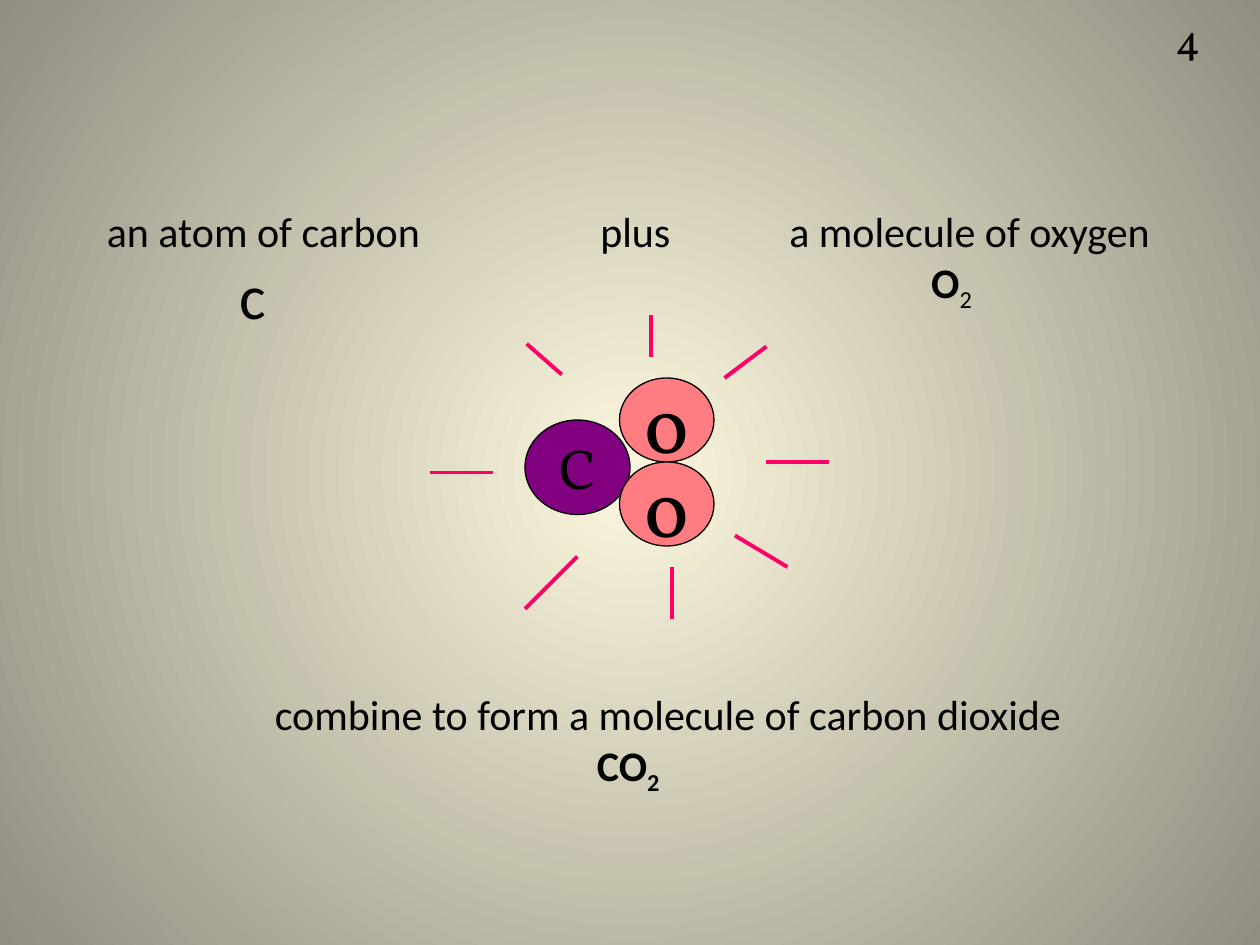
from lxml.etree import SubElement
from pptx import Presentation
from pptx.dml.color import RGBColor
from pptx.enum.shapes import MSO_CONNECTOR, MSO_SHAPE
from pptx.enum.text import MSO_ANCHOR, MSO_AUTO_SIZE, PP_ALIGN
from pptx.oxml.ns import qn
from pptx.util import Pt

BLACK = RGBColor(0x00, 0x00, 0x00)
CARBON_PURPLE = RGBColor(0x80, 0x00, 0x80)
OXYGEN_PINK = RGBColor(0xFF, 0x7C, 0x80)
RAY_PINK = RGBColor(0xFF, 0x00, 0x66)
GLOW_CREAM = RGBColor(0xFC, 0xF7, 0xDD)
EDGE_GREY = RGBColor(0x91, 0x8E, 0x81)

RAYS = [
    (372, 204, 372, 180),
    (414, 216, 438, 198),
    (438, 264, 474, 264),
    (321, 214, 301, 196.5),
    (282, 270, 246, 270),
    (384, 324, 384, 354),
    (330, 318, 300, 348),
    (420, 306, 450, 324),
]


def paint_background(slide):
    fill = slide.background.fill
    fill.gradient()
    for stop, colour, position in zip(
        fill.gradient_stops, (GLOW_CREAM, EDGE_GREY), (0, 1)
    ):
        stop.color.rgb = colour
        stop.position = position
    gradient = slide.element.find(".//" + qn("a:gradFill"))
    gradient.remove(gradient.find(qn("a:lin")))
    glow = SubElement(gradient, qn("a:path"))
    glow.set("path", "circle")
    centre = SubElement(glow, qn("a:fillToRect"))
    for side in "ltrb":
        centre.set(side, "50000")


def write(paragraph, text, size=24, font="Calibri", bold=False, baseline=0):
    run = paragraph.add_run()
    run.text = text
    run.font.size = Pt(size)
    run.font.name = font
    run.font.bold = bold
    run.font.color.rgb = BLACK
    if baseline:
        run.font._element.set("baseline", str(baseline * 1000))


def add_label(slide, left, top, width, height, text, **text_format):
    label = slide.shapes.add_textbox(Pt(left), Pt(top), Pt(width), Pt(height))
    frame = label.text_frame
    frame.word_wrap = True
    frame.auto_size = MSO_AUTO_SIZE.SHAPE_TO_FIT_TEXT
    write(frame.paragraphs[0], text, **text_format)
    return frame


def add_formula_line(frame, indent):
    formula = frame.add_paragraph()
    properties = formula._p.get_or_add_pPr()
    properties.set("marL", str(Pt(indent)))
    properties.set("indent", "0")
    return formula


def add_atom(shapes, left, top, width, height, symbol, colour, size):
    atom = shapes.add_shape(
        MSO_SHAPE.OVAL, Pt(left), Pt(top), Pt(width), Pt(height)
    )
    atom.shadow.inherit = False
    atom.fill.solid()
    atom.fill.fore_color.rgb = colour
    atom.line.color.rgb = BLACK
    atom.line.width = Pt(0.75)
    frame = atom.text_frame
    frame.word_wrap = False
    frame.vertical_anchor = MSO_ANCHOR.MIDDLE
    frame.paragraphs[0].alignment = PP_ALIGN.CENTER
    write(frame.paragraphs[0], symbol, size=size, font="Vollkorn")


def add_ray(shapes, *ends):
    ray = shapes.add_connector(
        MSO_CONNECTOR.STRAIGHT, *(Pt(length) for length in ends)
    )
    ray.line.color.rgb = RAY_PINK
    ray.line.width = Pt(2.25)
    SubElement(ray._element.spPr, qn("a:effectLst"))


def main():
    deck = Presentation()
    deck.slide_width, deck.slide_height = Pt(720), Pt(540)
    slide = deck.slides.add_slide(deck.slide_layouts[6])
    paint_background(slide)

    add_atom(slide.shapes, 300, 240, 60, 54, "C", CARBON_PURPLE, 32)
    oxygen_molecule = slide.shapes.add_group_shape()
    for top in (216, 264):
        add_atom(oxygen_molecule.shapes, 354, top, 54, 48, "o", OXYGEN_PINK, 48)

    carbon = add_label(slide, 54, 114, 208, 79, "an atom of carbon")
    write(add_formula_line(carbon, 76), "c", size=36)

    oxygen = add_label(slide, 444, 114, 241, 65, "a molecule of oxygen")
    oxygen_formula = add_formula_line(oxygen, 81)
    write(oxygen_formula, "O", bold=True)
    write(oxygen_formula, "2", baseline=-25)

    dioxide = add_label(
        slide, 150, 390, 499, 65, "combine to form a molecule of carbon dioxide"
    )
    dioxide_formula = add_formula_line(dioxide, 184)
    write(dioxide_formula, "CO", bold=True)
    write(dioxide_formula, "2", bold=True, baseline=-25)

    add_label(slide, 336, 114, 58, 36, "plus")

    burst = slide.shapes.add_group_shape()
    for ends in RAYS:
        add_ray(burst.shapes, *ends)

    add_label(slide, 664.5, 3.6, 27, 36, "4", font="Vollkorn")
    deck.save("out.pptx")


if __name__ == "__main__":
    main()
